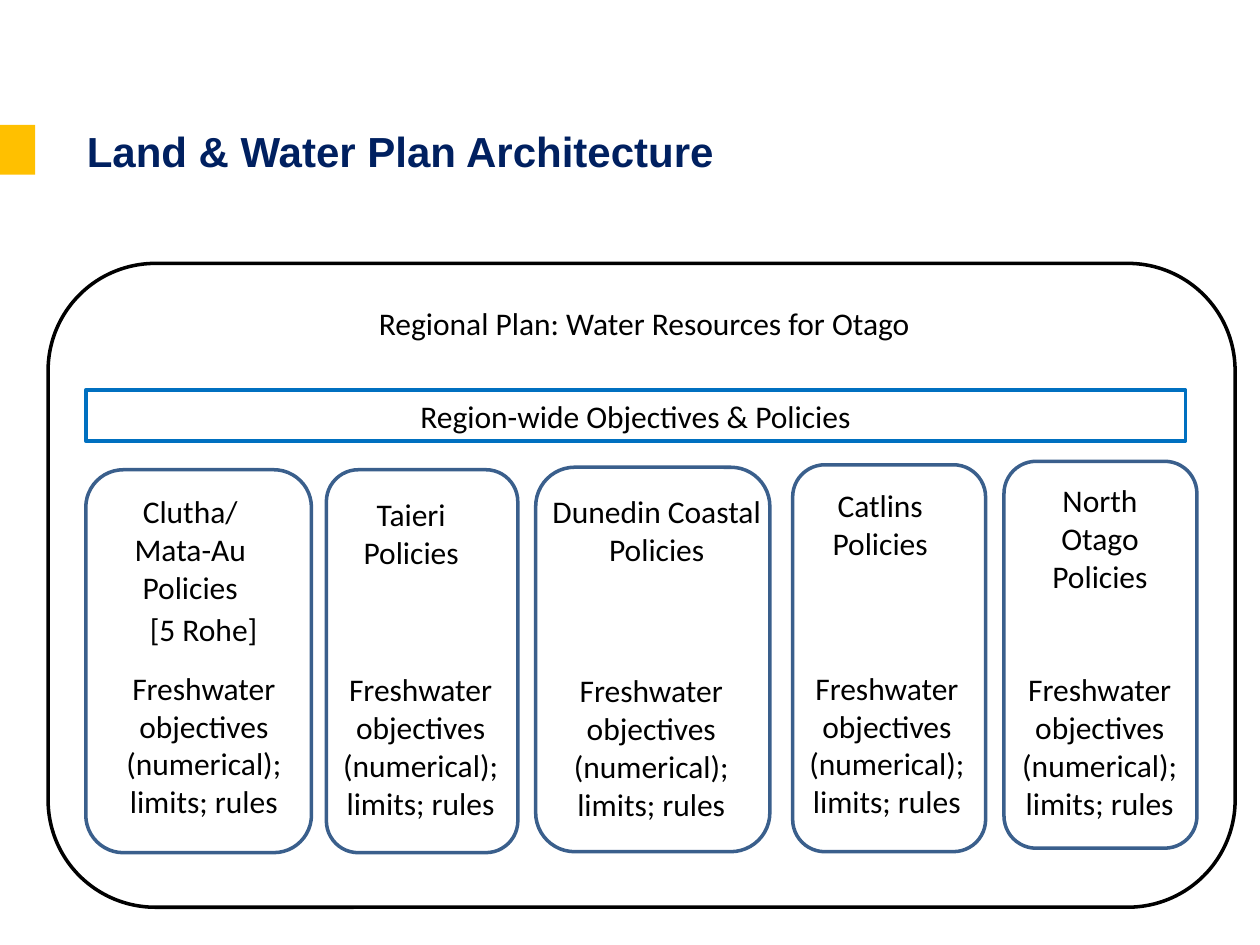
from pptx import Presentation
from pptx.dml.color import RGBColor
from pptx.enum.shapes import MSO_SHAPE as Kind
from pptx.enum.text import MSO_ANCHOR as Anchor, PP_ALIGN as Align
from pptx.util import Cm, Pt

BLACK, WHITE, NAVY = "000000", "FFFFFF", "002060"
GOLD, BLUE, STEEL = "FFC000", "0070C0", "3A5F8C"
DETAIL = "Freshwater objectives (numerical); limits; rules"

ZONES = [
    dict(head="Clutha/Mata-Au Policies", box=(1.73, 9.47, 4.55, 7.72),
         top=(1.88, 9.8, 3.91, 1.8), low=(1.75, 13.36)),
    dict(head="Taieri Policies", box=(6.58, 9.47, 3.86, 7.72),
         top=(7.06, 9.86, 2.46, 1.8), low=(6.12, 13.39)),
    dict(head="Dunedin Coastal\nPolicies", box=(10.8, 9.42, 4.72, 7.75),
         top=(10.85, 9.8, 4.78, 1.8), low=(10.77, 13.41), wrap=False),
    dict(head="Catlins Policies", box=(15.98, 9.37, 3.89, 7.8),
         top=(15.93, 9.68, 3.63, 1.8), low=(15.52, 13.36)),
    dict(head="North Otago Policies", box=(20.24, 9.3, 3.89, 7.8),
         top=(20.55, 9.58, 3.25, 2.57), low=(19.81, 13.39)),
]


def color(code):
    return RGBColor.from_string(code)


def write(frame, text, size=18, font="Calibri", tint=BLACK, bold=False,
          align=Align.CENTER, anchor=Anchor.TOP, wrap=True):
    frame.word_wrap = wrap
    frame.vertical_anchor = anchor
    for i, line in enumerate(text.split("\n")):
        para = frame.add_paragraph() if i else frame.paragraphs[0]
        para.alignment = align
        run = para.add_run()
        run.text = line
        run.font.size = Pt(size)
        run.font.name = font
        run.font.bold = bold
        run.font.color.rgb = color(tint)


class Deck:
    def __init__(self, wide, high):
        self.show = Presentation()
        self.show.slide_width, self.show.slide_height = Cm(wide), Cm(high)
        self.slide = self.show.slides.add_slide(self.show.slide_layouts[6])

    def shape(self, kind, area, fill=None, line=None, width=2):
        item = self.slide.shapes.add_shape(kind, *map(Cm, area))
        item.shadow.inherit = False
        if fill:
            item.fill.solid()
            item.fill.fore_color.rgb = color(fill)
        else:
            item.fill.background()
        if line:
            item.line.color.rgb = color(line)
            item.line.width = Pt(width)
        else:
            item.line.fill.background()
        return item

    def text(self, area, words, **style):
        item = self.slide.shapes.add_textbox(*map(Cm, area))
        write(item.text_frame, words, **style)

    def zone(self, head, box, top, low, wrap=True):
        self.text(top, head, wrap=wrap)
        self.text((*low, 4.72, 3.33), DETAIL)
        self.shape(Kind.ROUNDED_RECTANGLE, box, line=STEEL)


def main():
    deck = Deck(25.4, 19.05)
    deck.shape(Kind.RECTANGLE, (0, 2.52, 0.71, 1), fill=GOLD)
    deck.shape(Kind.ROUNDED_RECTANGLE, (0.97, 5.31, 23.93, 12.98),
               fill=WHITE, line=BLACK)
    deck.text((1.5, 1.45, 22.86, 3.18), "Land & Water Plan Architecture",
              size=24, font="Arial", tint=NAVY, bold=True,
              align=Align.LEFT, anchor=Anchor.MIDDLE)
    deck.text((7.39, 6, 11.33, 1.02),
              "Regional Plan: Water Resources for Otago",
              align=Align.LEFT, wrap=False)
    band = deck.shape(Kind.RECTANGLE, (1.73, 7.87, 22.17, 1.02),
                      line=BLUE, width=2.25)
    write(band.text_frame, "Region-wide Objectives & Policies")
    for zone in ZONES:
        deck.zone(**zone)
    deck.text((2.77, 12.17, 2.72, 1.02), "[5 Rohe]",
              align=Align.LEFT, wrap=False)
    deck.show.save("out.pptx")


if __name__ == "__main__":
    main()
